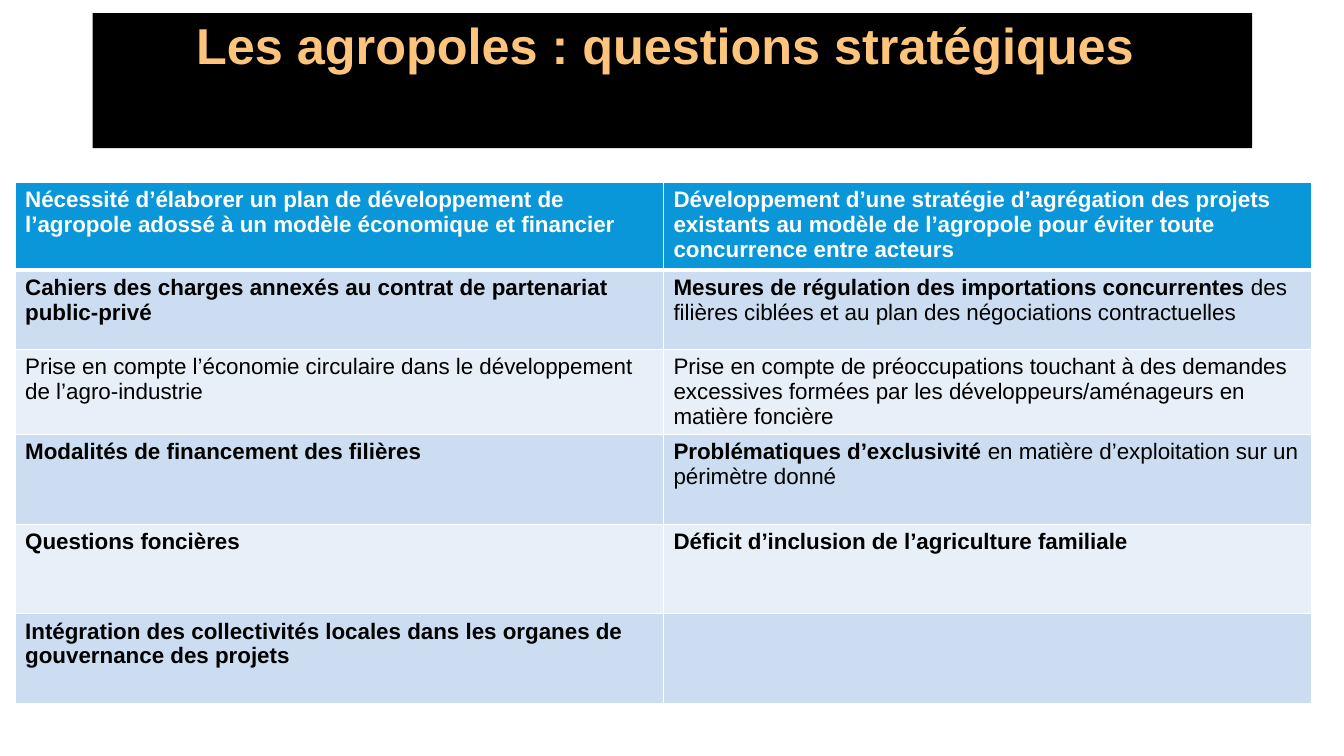
from lxml import etree
from pptx import Presentation
from pptx.dml.color import RGBColor
from pptx.enum import shapes, text
from pptx.oxml import ns
from pptx.util import Inches, Pt

BLACK = RGBColor(0x00, 0x00, 0x00)
WHITE = RGBColor(0xFF, 0xFF, 0xFF)
ORANGE = RGBColor(0xFE, 0xC4, 0x7C)
BLUE = RGBColor(0x0A, 0x97, 0xD9)
BAND_DARK = RGBColor(0xCC, 0xDD, 0xF1)
BAND_LIGHT = RGBColor(0xE7, 0xEF, 0xF8)

ROW_HEIGHTS = [0.87, 0.79, 0.84, 0.89, 0.89, 0.89]
# Each cell is a pair: bold text, then regular text
QUESTIONS = [
    [("Nécessité d’élaborer un plan de développement de l’agropole adossé "
      "à un modèle économique et financier", ""),
     ("Développement d’une stratégie d’agrégation des projets existants au modèle "
      "de l’agropole pour éviter toute concurrence entre acteurs", "")],
    [("Cahiers des charges annexés au contrat de partenariat public-privé", ""),
     ("Mesures de régulation des importations concurrentes ",
      "des filières ciblées et au plan des négociations contractuelles")],
    [("", "Prise en compte l’économie circulaire dans le développement "
      "de l’agro-industrie"),
     ("", "Prise en compte de préoccupations touchant à des demandes excessives "
      "formées par les développeurs/aménageurs en matière foncière")],
    [("Modalités de financement des filières", ""),
     ("Problématiques d’exclusivité ",
      "en matière d’exploitation sur un périmètre donné")],
    [("Questions foncières", ""),
     ("Déficit d’inclusion de l’agriculture familiale", "")],
    [("Intégration des collectivités locales dans les organes de gouvernance "
      "des projets", ""),
     ("", "")],
]


def add_run(p, words, size, color, bold):
    r = p.add_run()
    r.text = words
    for name, value in {"name": "Arial", "size": Pt(size), "bold": bold}.items():
        setattr(r.font, name, value)
    r.font.color.rgb = color


def add_border(cell, side, width):
    """Draw a white line on one side (L, R, T or B) of a cell."""
    ln = etree.SubElement(cell._tc.get_or_add_tcPr(), ns.qn(f"a:ln{side}"),
                          w=str(Pt(width)))
    fill = etree.SubElement(ln, ns.qn("a:solidFill"))
    etree.SubElement(fill, ns.qn("a:srgbClr"), val=str(WHITE))


prs = Presentation()
prs.slide_width, prs.slide_height = Inches(13.33), Inches(7.5)
slide = prs.slides.add_slide(prs.slide_layouts[6])

# Title band
sp = slide.shapes.add_shape(shapes.MSO_SHAPE.RECTANGLE, Inches(0.92), Inches(0.13),
                            Inches(11.5), Inches(1.34))
sp.shadow.inherit = False
sp.fill.solid()
sp.fill.fore_color.rgb = BLACK
sp.line.fill.background()
tf = sp.text_frame
for name, value in {"word_wrap": True, "vertical_anchor": text.MSO_ANCHOR.TOP,
                    "margin_top": Inches(0.08), "margin_right": Inches(0.24)}.items():
    setattr(tf, name, value)
p = tf.paragraphs[0]
p.alignment = text.PP_ALIGN.CENTER
p.line_spacing = 0.9
add_run(p, "Les agropoles : questions stratégiques", 36, ORANGE, True)

# Table of questions
table = slide.shapes.add_table(len(QUESTIONS), 2, Inches(0.15), Inches(1.81),
                               Inches(12.86), Inches(sum(ROW_HEIGHTS))).table
for column in table.columns:
    column.width = Inches(6.43)

for i, (height, row) in enumerate(zip(ROW_HEIGHTS, QUESTIONS)):
    table.rows[i].height = Inches(height)
    background = BLUE if i == 0 else BAND_DARK if i % 2 else BAND_LIGHT
    for j, (strong, plain) in enumerate(row):
        cell = table.cell(i, j)
        widths = {"L": 1, "R": 1, "T": 3 if i == 1 else 1, "B": 3 if i == 0 else 1}
        for side, width in widths.items():
            add_border(cell, side, width)
        cell.fill.solid()
        cell.fill.fore_color.rgb = background
        p = cell.text_frame.paragraphs[0]
        for words, bold in ((strong, True), (plain, False)):
            if words:
                add_run(p, words, 16, BLACK if i else WHITE, bold)

prs.save("out.pptx")
